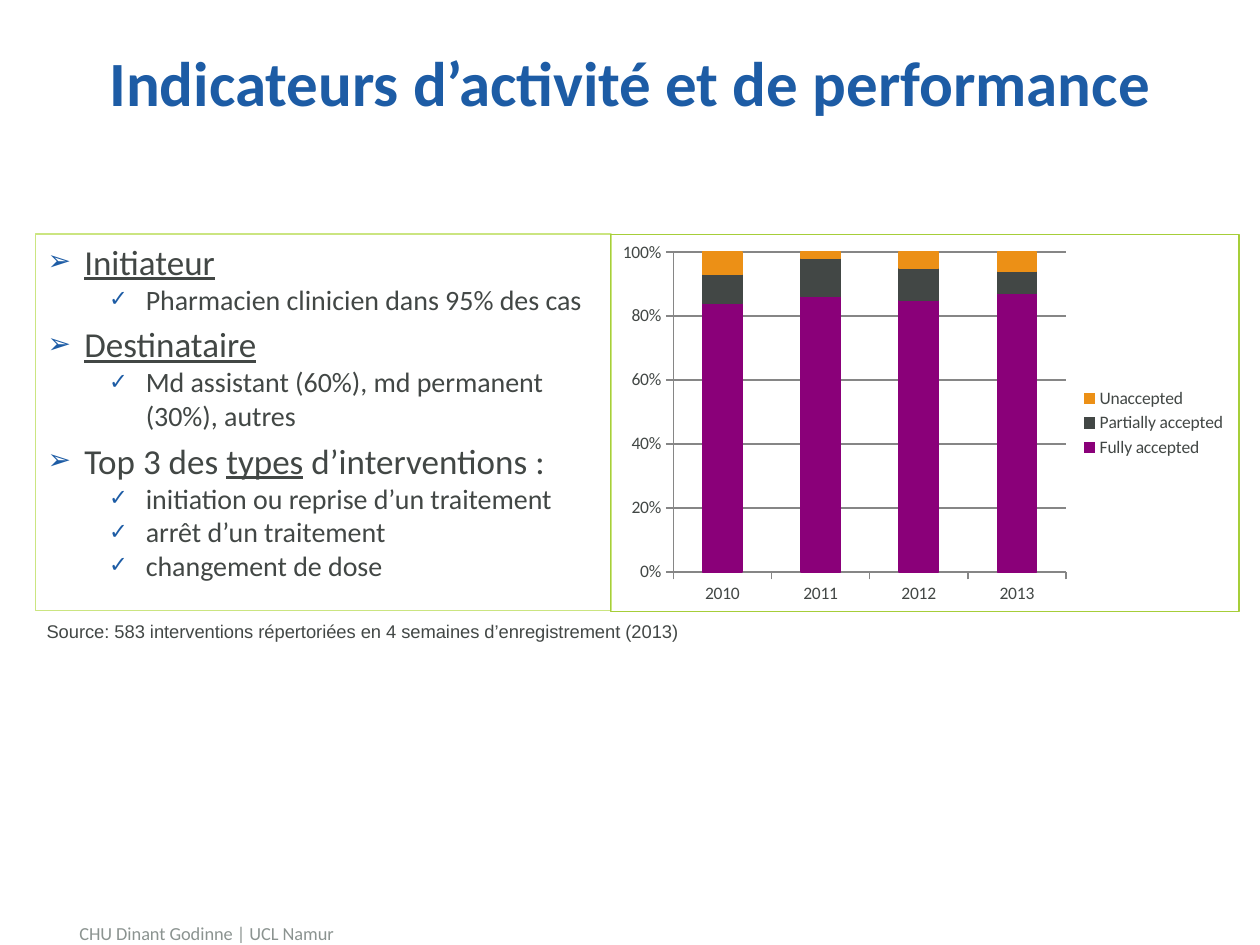
from lxml.etree import SubElement
from pptx import Presentation
from pptx.chart.data import CategoryChartData
from pptx.dml.color import RGBColor
from pptx.enum.chart import XL_CHART_TYPE as ChartType, XL_LEGEND_POSITION as LegendPos, XL_TICK_MARK as Tick
from pptx.enum.shapes import MSO_SHAPE as Shape
from pptx.enum.text import MSO_ANCHOR as Anchor, PP_ALIGN as Align
from pptx.oxml import parse_xml
from pptx.oxml.ns import nsdecls, qn
from pptx.util import Cm, Pt

BLUE, DARK, GRID = "1D5CA5", "424745", "868686"


def color(value):
    return RGBColor.from_string(value)


def write(paragraph, text, size, ink=DARK, face="Calibri", bold=False, underline=False):
    run = paragraph.add_run()
    run.text = text
    run.font.size = Pt(size)
    run.font.name = face
    run.font.bold = bold
    run.font.underline = underline
    run.font.color.rgb = color(ink)


prs = Presentation()
prs.slide_width, prs.slide_height = Cm(25.4), Cm(19.05)
slide = prs.slides.add_slide(prs.slide_layouts[6])
shapes = slide.shapes

footer = shapes.add_textbox(Cm(1.35), Cm(18.47), Cm(5.72), Cm(0.71)).text_frame
footer.word_wrap = False
write(footer.paragraphs[0], "CHU Dinant Godinne | UCL Namur", 10.5, ink="8B9390")

title = shapes.add_textbox(Cm(1.27), Cm(0.76), Cm(22.86), Cm(1.75)).text_frame
title.word_wrap = True
title.vertical_anchor = Anchor.MIDDLE
title.paragraphs[0].alignment = Align.CENTER
write(title.paragraphs[0], "Indicateurs d’activité et de performance", 36, ink=BLUE, bold=True)

findings = shapes.add_shape(Shape.RECTANGLE, Cm(0.71), Cm(4.72), Cm(11.61), Cm(7.59))
findings.shadow.inherit = False
findings.fill.background()
findings.line.color.rgb = color("CBE581")
findings.line.width = Pt(0.75)
findings.text_frame.word_wrap = True
findings.text_frame.vertical_anchor = Anchor.TOP

outline = [
    (0, [("Initiateur", True)]),
    (1, [("Pharmacien clinicien dans 95% des cas", False)]),
    (0, [("Destinataire", True)]),
    (1, [("Md assistant (60%), md permanent (30%), autres", False)]),
    (0, [("Top 3 des ", False), ("types", True), (" d’interventions :", False)]),
    (1, [("initiation ou reprise d’un traitement", False)]),
    (1, [("arrêt d’un traitement", False)]),
    (1, [("changement de dose", False)]),
]
levels = [("➢", 0.74, 20), ("✓", 1.98, 16)]
for index, (level, parts) in enumerate(outline):
    mark, margin, size = levels[level]
    item = findings.text_frame.add_paragraph() if index else findings.text_frame.paragraphs[0]
    item.level = level
    item.alignment = Align.LEFT
    properties = item._p.get_or_add_pPr()
    properties.set("marL", str(Cm(margin)))
    properties.set("indent", str(-Cm(0.74)))
    SubElement(SubElement(properties, qn("a:buClr")), qn("a:srgbClr"), val=BLUE)
    SubElement(properties, qn("a:buSzPct"), val="80000")
    SubElement(properties, qn("a:buFont"), typeface="Arial")
    SubElement(properties, qn("a:buChar"), char=mark)
    if index and level == 0:
        item.space_before = Pt(4)
    for text, underline in parts:
        write(item, text, size, underline=underline)

acceptance = [
    ("Fully accepted", (0.84, 0.86, 0.85, 0.87), "8A0079"),
    ("Partially accepted", (0.09, 0.12, 0.10, 0.07), DARK),
    ("Unaccepted", (0.08, 0.02, 0.05, 0.06), "EC9016"),
]
data = CategoryChartData(number_format="0%")
data.categories = ["2010", "2011", "2012", "2013"]
for name, values, _ in acceptance:
    data.add_series(name, values)
chart = shapes.add_chart(
    ChartType.COLUMN_STACKED, Cm(12.29), Cm(4.72), Cm(12.7), Cm(7.62), data
).chart
chart.has_title = False
chart.font.name = "Calibri"
chart.font.size = Pt(10)
chart.font.color.rgb = color(DARK)
chart.has_legend = True
chart.legend.position = LegendPos.RIGHT
chart.legend.include_in_layout = False

plot = chart.plots[0]
plot.gap_width, plot.overlap = 150, 100
plot.vary_by_categories = False
for series, (_, _, tint) in zip(plot.series, acceptance):
    series.format.fill.solid()
    series.format.fill.fore_color.rgb = color(tint)
    series.format.line.color.rgb = color(tint)
    series.format.line.width = Pt(0.75)

years, share = chart.category_axis, chart.value_axis
share.minimum_scale, share.maximum_scale, share.major_unit = 0, 1, 0.2
share.has_major_gridlines = True
share.tick_labels.number_format = "0%"
share.tick_labels.number_format_is_linked = False
for axis in (years, share):
    axis.major_tick_mark = Tick.OUTSIDE
    axis.minor_tick_mark = Tick.NONE
for ruled in (years, share, share.major_gridlines):
    ruled.format.line.color.rgb = color(GRID)
    ruled.format.line.width = Pt(0.75)

chart._chartSpace.find(qn("c:chart")).addnext(parse_xml(
    f'<c:spPr {nsdecls("c", "a")}><a:noFill/><a:ln w="{Pt(0.75)}"><a:solidFill>'
    '<a:srgbClr val="A6CE39"/></a:solidFill></a:ln></c:spPr>'
))

source = shapes.add_shape(Shape.RECTANGLE, Cm(0.69), Cm(12.37), Cm(17.75), Cm(0.74))
source.shadow.inherit = False
source.fill.solid()
source.fill.fore_color.rgb = color("FFFFFF")
source.line.fill.background()
source.text_frame.word_wrap = True
source.text_frame.vertical_anchor = Anchor.TOP
citation = source.text_frame.paragraphs[0]
citation.alignment = Align.LEFT
write(citation, "Source: 583 interventions répertoriées en 4 semaines d’enregistrement (2013)", 10.5, face="Arial")

prs.save("out.pptx")
